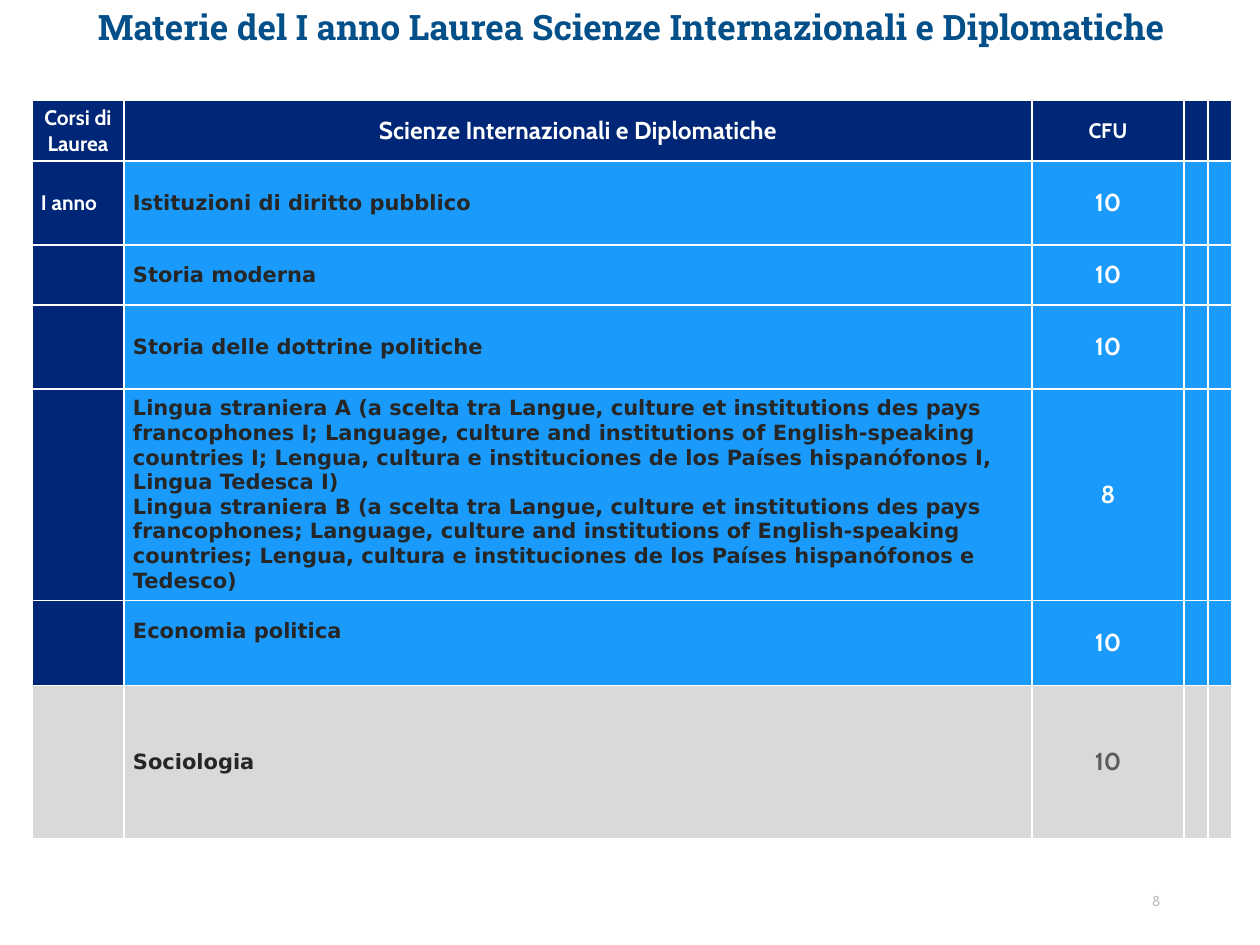
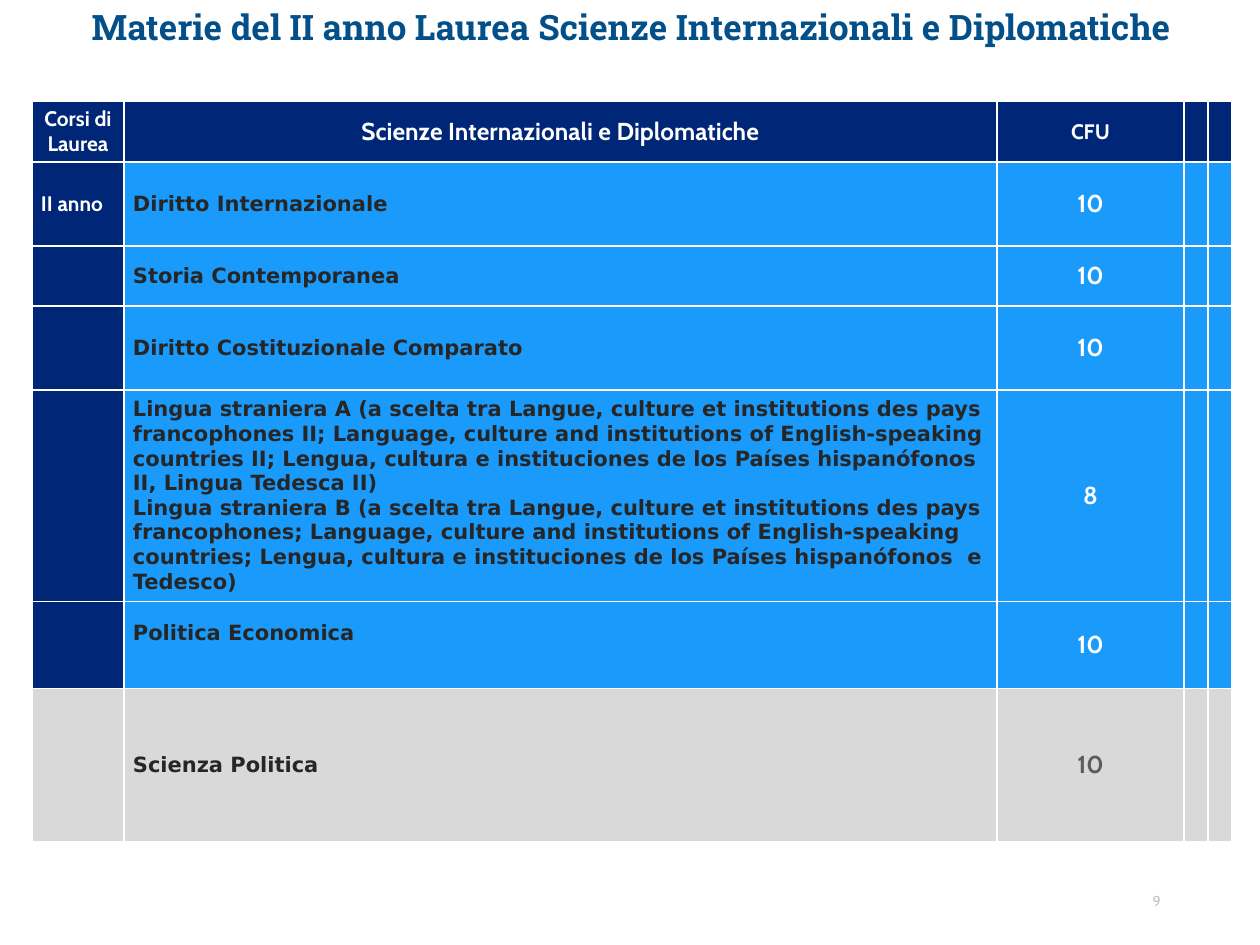
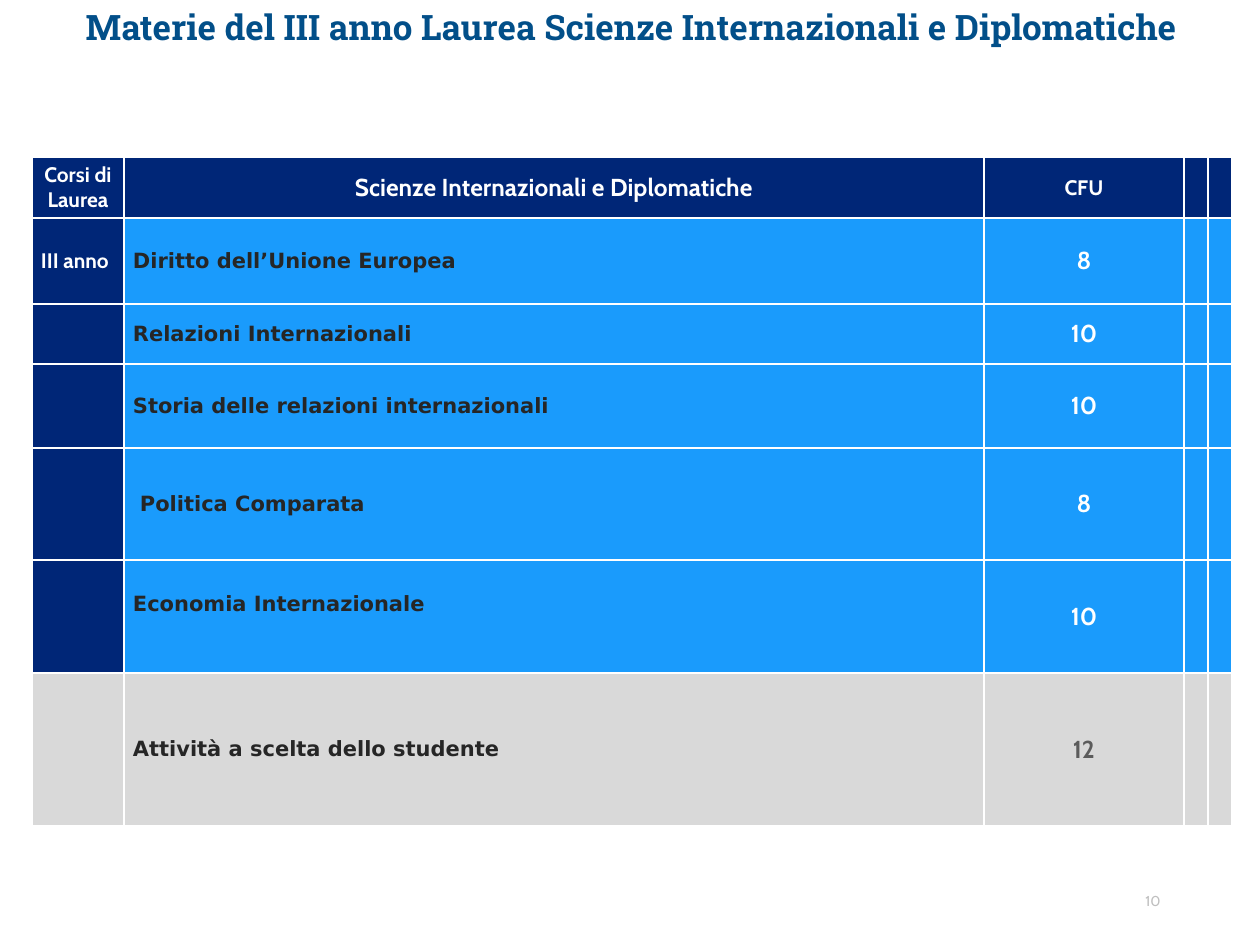
from dataclasses import dataclass

from lxml import etree
from pptx import Presentation
from pptx import util as u
from pptx.dml import color
from pptx.enum import text
from pptx.oxml import ns

SCALE = u.Inches(1) / 126
PAGE_WIDTH, PAGE_HEIGHT = 1260, 945
TABLE_LEFT = 32
YEAR_WIDTH, TEXT_AND_CREDIT_WIDTH, SPARE_WIDTH = 92, 1060, 24
PAD_X, PAD_Y = 9, 5
SECOND_LINE = 24

NAVY, BLUE, GREY, WHITE = "002677", "1A9BFC", "D9D9D9", "FFFFFF"
TITLE_BLUE, INK, DARK_GREY, PALE_GREY = "024F89", "262626", "5C5C5C", "BFBFBF"

CENTER, LEFT, RIGHT = text.PP_ALIGN.CENTER, text.PP_ALIGN.LEFT, text.PP_ALIGN.RIGHT
DEGREE = "Scienze Internazionali e Diplomatiche"


@dataclass(frozen=True)
class Style:
    font: str
    size: float
    color: str
    bold: bool = True
    align: text.PP_ALIGN = LEFT


TITLE = Style("Roboto Slab", 20, TITLE_BLUE, align=CENTER)
NUMBER = Style("Cabin", 8.2, PALE_GREY, bold=False, align=RIGHT)
HEADING = Style("Cabin", 12, WHITE, align=CENTER)
DEGREE_HEADING = Style("Cabin", 14, WHITE, align=CENTER)
YEAR = Style("Cabin", 12, WHITE)
SUBJECT = Style("DejaVu Sans", 12, INK)
CREDIT = Style("Cabin", 14, WHITE, align=CENTER)
LAST_CREDIT = Style("Cabin", 14, DARK_GREY, align=CENTER)


@dataclass(frozen=True)
class Course:
    lines: tuple[str, ...]
    credits: int
    height: int
    indent: int = 0
    lift: int = 0


@dataclass(frozen=True)
class StudyYear:
    number: int
    name: str
    top: int
    credit_width: int
    courses: tuple[Course, ...]


def language_lines(level: str, joint: str) -> tuple[str, str]:
    return (
        "Lingua straniera A (a scelta tra Langue, culture et institutions des pays "
        f"francophones {level}; Language, culture and institutions of English-speaking "
        f"countries {level}; Lengua, cultura e instituciones de los Países hispanófonos "
        f"{level}, Lingua Tedesca {level})",
        "Lingua straniera B (a scelta tra Langue, culture et institutions des pays "
        "francophones; Language, culture and institutions of English-speaking countries; "
        f"Lengua, cultura e instituciones de los Países hispanófonos{joint}e Tedesco)",
    )


YEARS = (
    StudyYear(8, "I anno", 100, 152, (
        Course(("Istituzioni di diritto pubblico",), 10, 84),
        Course(("Storia moderna",), 10, 60),
        Course(("Storia delle dottrine politiche",), 10, 84),
        Course(language_lines("I", " "), 8, 207),
        Course(("Economia politica",), 10, 85, lift=SECOND_LINE),
        Course(("Sociologia",), 10, 153),
    )),
    StudyYear(9, "II anno", 101, 187, (
        Course(("Diritto Internazionale",), 10, 84),
        Course(("Storia Contemporanea",), 10, 60),
        Course(("Diritto Costituzionale Comparato",), 10, 84),
        Course(language_lines("II", "  "), 8, 207),
        Course(("Politica Economica",), 10, 87, lift=SECOND_LINE),
        Course(("Scienza Politica",), 10, 153),
    )),
    StudyYear(10, "III anno", 157, 200, (
        Course(("Diritto dell’Unione Europea",), 8, 86),
        Course(("Relazioni Internazionali",), 10, 60),
        Course(("Storia delle relazioni internazionali",), 10, 84),
        Course(("Politica Comparata",), 8, 112, indent=7),
        Course(("Economia Internazionale",), 10, 113, lift=SECOND_LINE),
        Course(("Attività a scelta dello studente",), 12, 153),
    )),
)


def px(length: int) -> u.Emu:
    return u.Emu(round(length * SCALE))


def rgb(value: str) -> color.RGBColor:
    return color.RGBColor.from_string(value)


def write(frame, lines: tuple[str, ...], style: Style) -> None:
    for index, line in enumerate(lines):
        para = frame.add_paragraph() if index else frame.paragraphs[0]
        para.alignment = style.align
        span = para.add_run()
        span.text = line
        span.font.name = style.font
        span.font.size = u.Pt(style.size)
        span.font.bold = style.bold
        span.font.color.rgb = rgb(style.color)


def add_borders(cell) -> None:
    properties = cell._tc.get_or_add_tcPr()
    for index, side in enumerate(("lnL", "lnR", "lnT", "lnB")):
        line = etree.Element(ns.qn(f"a:{side}"), w=str(u.Pt(1)))
        fill = etree.SubElement(line, ns.qn("a:solidFill"))
        etree.SubElement(fill, ns.qn("a:srgbClr"), val=WHITE)
        properties.insert(index, line)


def format_cell(cell, fill: str) -> None:
    cell.margin_left = cell.margin_right = px(PAD_X)
    cell.margin_top = cell.margin_bottom = px(PAD_Y)
    cell.vertical_anchor = text.MSO_ANCHOR.MIDDLE
    cell.fill.solid()
    cell.fill.fore_color.rgb = rgb(fill)
    add_borders(cell)


def add_title(page, year: StudyYear) -> None:
    title = page.shapes.title
    title.left, title.top, title.width, title.height = px(14), px(4), px(1235), px(58)
    frame = title.text_frame
    frame.word_wrap = True
    frame.auto_size = text.MSO_AUTO_SIZE.NONE
    frame.vertical_anchor = text.MSO_ANCHOR.TOP
    write(frame, (f"Materie del {year.name} Laurea {DEGREE}",), TITLE)
    frame.paragraphs[0].line_spacing = 0.9


def add_number(page, number: int) -> None:
    box = page.shapes.add_textbox(px(890), px(876), px(283), px(50))
    frame = box.text_frame
    frame.word_wrap = True
    frame.vertical_anchor = text.MSO_ANCHOR.MIDDLE
    write(frame, (str(number),), NUMBER)


def add_courses(page, year: StudyYear) -> None:
    widths = (YEAR_WIDTH, TEXT_AND_CREDIT_WIDTH - year.credit_width,
              year.credit_width, SPARE_WIDTH, SPARE_WIDTH)
    heights = (61, *(course.height for course in year.courses))
    table = page.shapes.add_table(
        len(heights), len(widths), px(TABLE_LEFT), px(year.top),
        px(sum(widths)), px(sum(heights))).table
    table.first_row = table.horz_banding = False
    for column, width in zip(table.columns, widths):
        column.width = px(width)
    last = len(year.courses)
    for index, (row, height) in enumerate(zip(table.rows, heights)):
        row.height = px(height)
        for place, cell in enumerate(row.cells):
            if index == last:
                fill = GREY
            else:
                fill = NAVY if index == 0 or place == 0 else BLUE
            format_cell(cell, fill)

    headings = (("Corsi di Laurea", HEADING), (DEGREE, DEGREE_HEADING), ("CFU", HEADING))
    for place, (heading, style) in enumerate(headings):
        write(table.cell(0, place).text_frame, (heading,), style)
    write(table.cell(1, 0).text_frame, (year.name,), YEAR)
    for index, course in enumerate(year.courses, 1):
        subject = table.cell(index, 1)
        subject.margin_left = px(PAD_X + course.indent)
        subject.margin_bottom = px(PAD_Y + course.lift)
        write(subject.text_frame, course.lines, SUBJECT)
        write(table.cell(index, 2).text_frame, (str(course.credits),),
              LAST_CREDIT if index == last else CREDIT)


def main() -> None:
    deck = Presentation()
    deck.slide_width, deck.slide_height = px(PAGE_WIDTH), px(PAGE_HEIGHT)
    for year in YEARS:
        page = deck.slides.add_slide(deck.slide_layouts[5])
        add_number(page, year.number)
        add_title(page, year)
        add_courses(page, year)
    deck.save("out.pptx")


if __name__ == "__main__":
    main()
